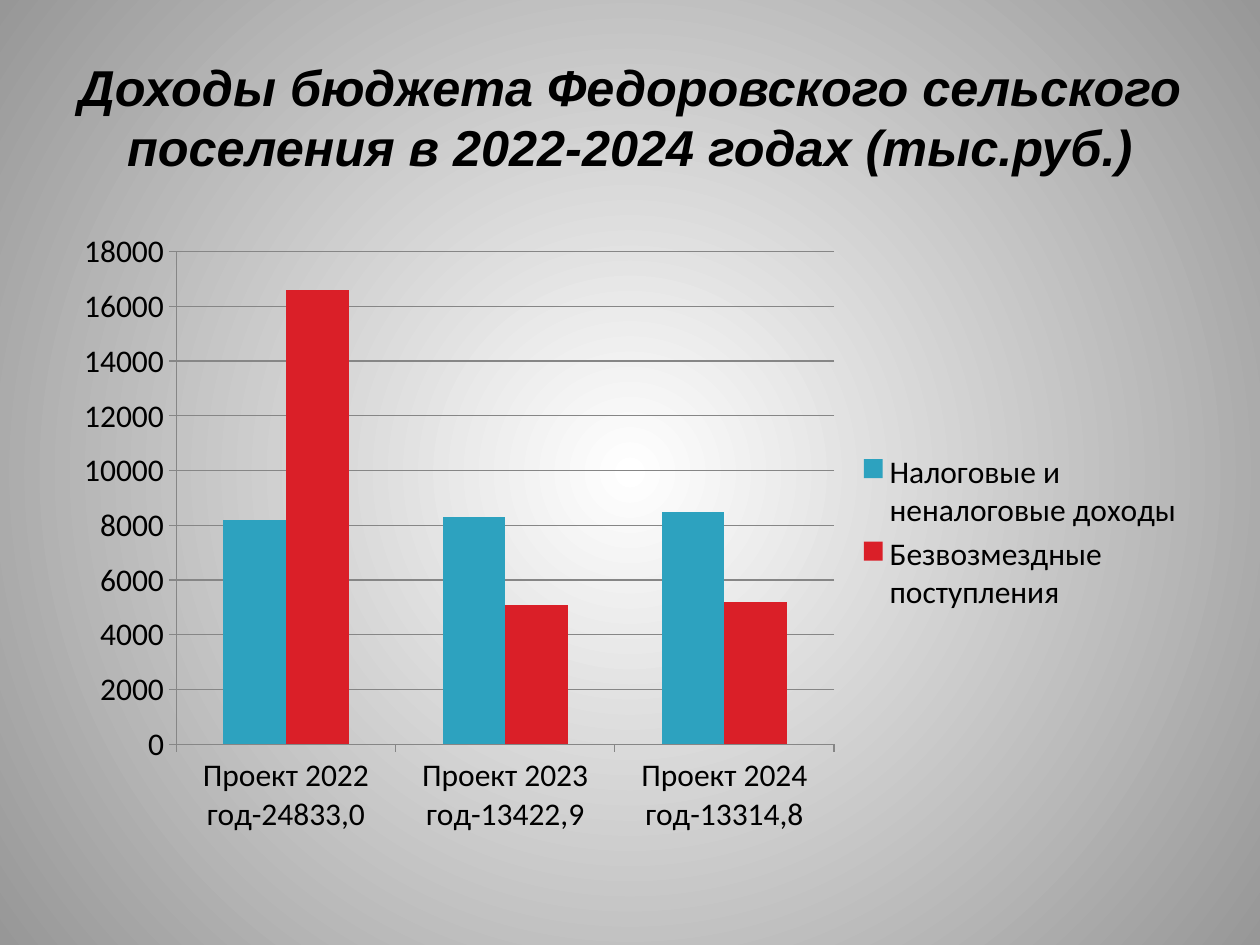
from lxml.etree import SubElement
from pptx import Presentation
from pptx.chart.data import CategoryChartData
from pptx.dml.color import RGBColor
from pptx.enum.chart import XL_CHART_TYPE, XL_LEGEND_POSITION, XL_TICK_MARK
from pptx.enum.text import MSO_ANCHOR, MSO_AUTO_SIZE, PP_ALIGN
from pptx.oxml import parse_xml
from pptx.oxml.ns import nsdecls, qn
from pptx.util import Pt

BLACK = RGBColor(0, 0, 0)
WHITE = RGBColor(255, 255, 255)
GREY = RGBColor(0x97, 0x97, 0x97)
RULE = RGBColor(0x86, 0x86, 0x86)
BLUE = RGBColor(0x2D, 0xA2, 0xBF)
RED = RGBColor(0xDA, 0x1F, 0x28)

TITLE = "Доходы бюджета Федоровского сельского поселения в 2022-2024 годах (тыс.руб.)"
YEARS = ["Проект 2022 год-24833,0", "Проект 2023 год-13422,9", "Проект 2024 год-13314,8"]
ROWS = [
    ("Налоговые и неналоговые доходы", (8200, 8300, 8500), BLUE),
    ("Безвозмездные поступления", (16600, 5100, 5200), RED),
]
PLOT = {"x": 0.1, "y": 0.05, "w": 0.58, "h": 0.79}


def apply(item, form):
    for key, value in form.items():
        setattr(item, key, value)


def set_back(slide):
    fill = slide.background.fill
    fill.gradient()
    for stop, color, place in zip(fill.gradient_stops, (WHITE, GREY), (0, 1)):
        stop.color.rgb = color
        stop.position = place
    grad = next(slide.element.iter(qn("a:gradFill")))
    for line in grad.findall(qn("a:lin")):
        grad.remove(line)
    ring = SubElement(grad, qn("a:path"), path="circle")
    SubElement(ring, qn("a:fillToRect"), dict.fromkeys("ltrb", "50000"))


def add_title(slide):
    title = slide.shapes.title
    apply(title, {"left": Pt(36), "top": Pt(21.6), "width": Pt(648), "height": Pt(90)})
    frame = title.text_frame
    frame.text = TITLE
    apply(frame, {"word_wrap": True, "auto_size": MSO_AUTO_SIZE.NONE,
                  "vertical_anchor": MSO_ANCHOR.MIDDLE})
    para = frame.paragraphs[0]
    para.alignment = PP_ALIGN.CENTER
    font = para.runs[0].font
    apply(font, {"name": "Arial", "size": Pt(28.8), "bold": True, "italic": True})
    font.color.rgb = BLACK


def set_line(line):
    line.width = Pt(0.75)
    line.color.rgb = RULE


def set_plot(chart):
    area = next(chart.element.iter(qn("c:plotArea")))
    for old in area.findall(qn("c:layout")):
        area.remove(old)
    parts = "".join(f'<c:{key} val="{value}"/>' for key, value in PLOT.items())
    area.insert(0, parse_xml(
        f'<c:layout {nsdecls("c")}><c:manualLayout><c:layoutTarget val="inner"/>'
        f'<c:xMode val="edge"/><c:yMode val="edge"/>{parts}'
        '</c:manualLayout></c:layout>'))


def set_axes(chart):
    for axis in (chart.category_axis, chart.value_axis):
        apply(axis, {"major_tick_mark": XL_TICK_MARK.OUTSIDE,
                     "minor_tick_mark": XL_TICK_MARK.NONE})
        set_line(axis.format.line)
    value = chart.value_axis
    apply(value, {"minimum_scale": 0, "maximum_scale": 18000, "major_unit": 2000,
                  "has_major_gridlines": True})
    set_line(value.major_gridlines.format.line)
    apply(value.tick_labels, {"number_format": "General", "number_format_is_linked": False})


def add_bars(slide):
    data = CategoryChartData()
    data.categories = YEARS
    for name, nums, _ in ROWS:
        data.add_series(name, nums)
    chart = slide.shapes.add_chart(XL_CHART_TYPE.COLUMN_CLUSTERED, Pt(36), Pt(126),
                                   Pt(648), Pt(356.4), data).chart
    apply(chart, {"has_title": False, "has_legend": True})
    apply(chart.font, {"name": "Calibri", "size": Pt(18)})
    chart.font.color.rgb = BLACK
    apply(chart.legend, {"position": XL_LEGEND_POSITION.RIGHT, "include_in_layout": False})
    plot = chart.plots[0]
    apply(plot, {"gap_width": 150, "overlap": 0, "vary_by_categories": False})
    for bars, (_, _, color) in zip(plot.series, ROWS):
        bars.format.fill.solid()
        bars.format.fill.fore_color.rgb = color
    set_axes(chart)
    set_plot(chart)


def main():
    deck = Presentation()
    apply(deck, {"slide_width": Pt(720), "slide_height": Pt(540)})
    slide = deck.slides.add_slide(deck.slide_layouts[5])
    set_back(slide)
    add_title(slide)
    add_bars(slide)
    deck.save("out.pptx")


if __name__ == "__main__":
    main()
